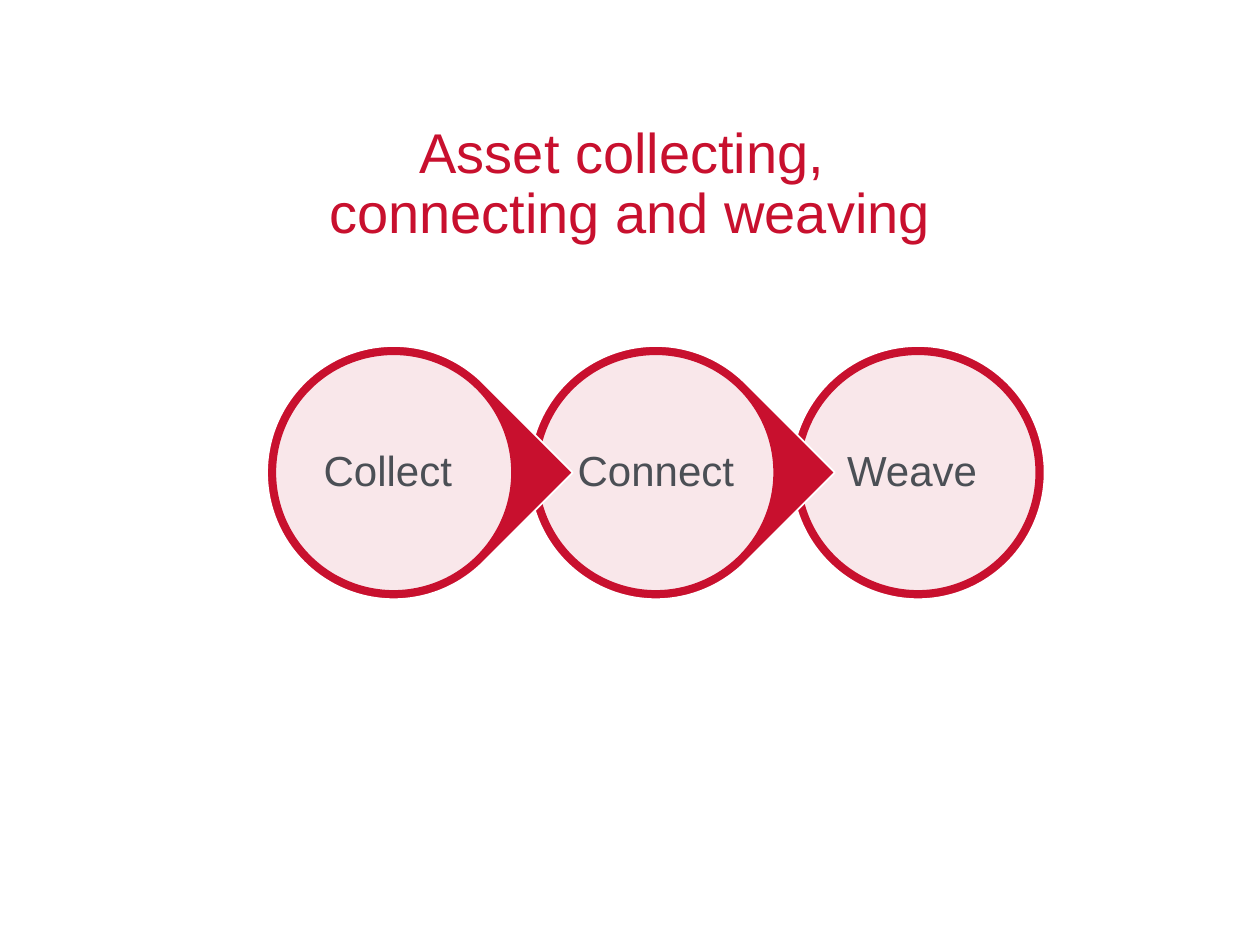
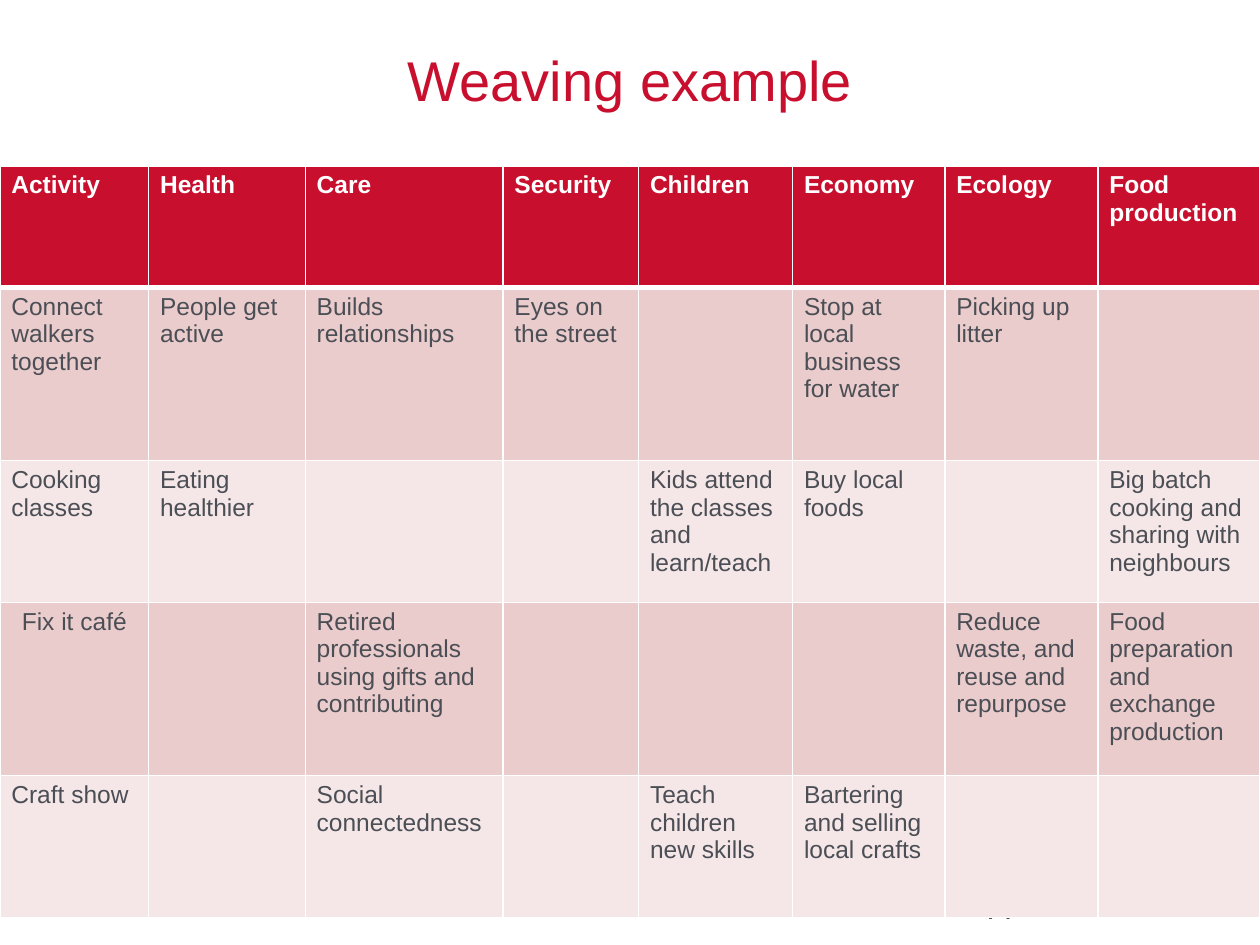
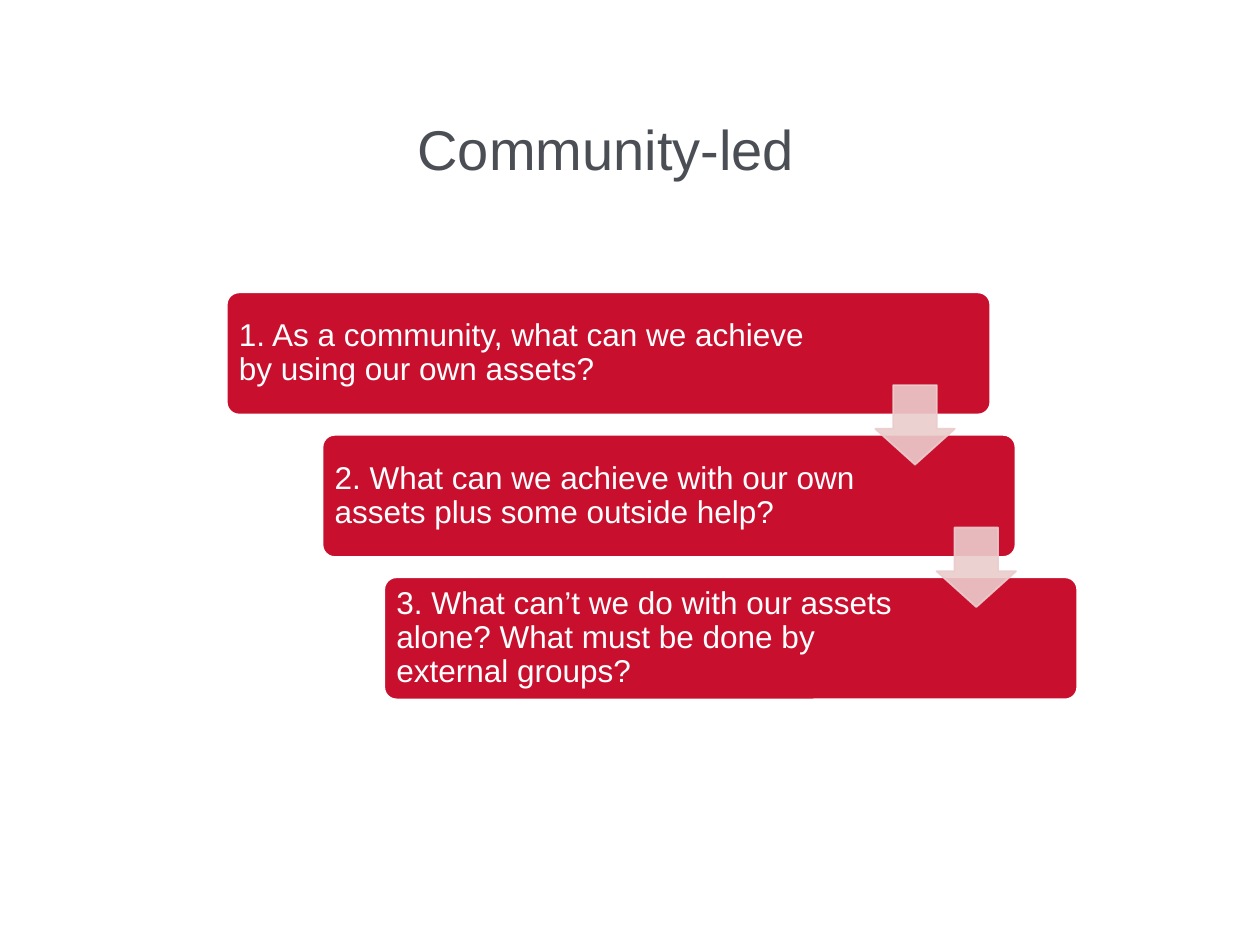
from pptx import Presentation
from pptx.dml.color import RGBColor as Rgb
from pptx.enum.shapes import MSO_SHAPE as Kind
from pptx.enum.text import MSO_ANCHOR as Anchor, MSO_AUTO_SIZE as Fit, PP_ALIGN as Align
from pptx.oxml import parse_xml
from pptx.oxml.ns import nsdecls, qn
from pptx.util import Pt
from lxml.etree import SubElement as Sub

HUES = {"red": "C8102E", "ink": "4B4F55", "white": "FFFFFF",
        "rose": "EBCCCD", "blush": "F5E7E8"}
FACE = "Arial"
WIDE, HIGH = 720, 540
TITLE_W, TITLE_H = 528.5, 54

COLS = [85, 89.5, 113, 77.5, 88, 87, 87.5, 92.5]
ROWS = [69.5, 99, 81, 99, 81]
GRID = [
    ["Activity", "Health", "Care", "Security", "Children", "Economy",
     "Ecology", "Food production"],
    ["Connect walkers together", "People get active", "Builds relationships",
     "Eyes on the street", "", "Stop at local business for water",
     "Picking up litter", ""],
    ["Cooking classes", "Eating healthier", "", "",
     "Kids attend the classes and learn/teach", "Buy local foods", "",
     "Big batch cooking and sharing with neighbours"],
    ["Fix it café", "", "Retired professionals using gifts and contributing",
     "", "", "", "Reduce waste, and reuse and repurpose",
     "Food preparation and exchange production"],
    ["Craft show", "", "Social connectedness", "",
     "Teach children new skills", "Bartering and selling local crafts", "", ""],
]

# left, width, label width, text
STEPS = [
    (0, 436.3, 353.5,
     "1. As a community, what can we achieve by using our own assets?"),
    (54.7, 396, 311.8,
     "2. What can we achieve with our own assets plus some outside help?"),
    (90, 396, 311.8,
     "3. What can’t we do with our assets alone? "
     "What must be done by external groups?"),
]


def hue(name):
    return Rgb.from_string(HUES[name])


def assign(item, values):
    for name, value in values.items():
        setattr(item, name, value)


def write(frame, text, size, color, bold=False, **para):
    frame.text = text
    for part in frame.paragraphs:
        assign(part, para)
        for run in part.runs:
            assign(run.font, {"name": FACE, "size": Pt(size), "bold": bold})
            run.font.color.rgb = hue(color)


def shape(slide, kind, box, fill, line, alpha=None, edge=None, turn=0, adj=()):
    """Add a preset shape; alpha and edge are the opacity of fill and line."""
    item = slide.shapes.add_shape(kind, *map(Pt, box))
    item.shadow.inherit = False
    item.rotation = turn
    item.fill.solid()
    item.fill.fore_color.rgb = hue(fill)
    item.line.color.rgb = hue(line)
    item.line.width = Pt(1)
    for place, value in enumerate(adj):
        item.adjustments[place] = value
    props = item.element.spPr
    for node, share in ((props, alpha), (props.find(qn("a:ln")), edge)):
        if share:
            tint = node.find(qn("a:solidFill")).find(qn("a:srgbClr"))
            Sub(tint, qn("a:alpha"), val=str(share * 1000))


def label(slide, box, text, size, color, pad, align):
    frame = slide.shapes.add_textbox(*map(Pt, box)).text_frame
    sides = {"margin_" + s: Pt(pad) for s in ("left", "top", "right", "bottom")}
    assign(frame, {"word_wrap": True, "vertical_anchor": Anchor.MIDDLE, **sides})
    write(frame, text, size, color, alignment=align, line_spacing=0.9)


def head(slide, left, top, text, color="red"):
    title = slide.shapes.title
    assign(title, {"left": Pt(left), "top": Pt(top),
                   "width": Pt(TITLE_W), "height": Pt(TITLE_H)})
    assign(title.text_frame, {"vertical_anchor": Anchor.TOP,
                              "auto_size": Fit.NONE, "word_wrap": True})
    write(title.text_frame, text, 32, color,
          alignment=Align.CENTER, line_spacing=0.9)


def chain(slide, left, top, size, pitch, words):
    """Draw linked drops from right to left, so each tip overlaps the next."""
    def inset(x, gap):
        return x + gap, top + gap, size - 2 * gap, size - 2 * gap

    last = len(words) - 1
    for place in range(last, -1, -1):
        x = left + place * pitch
        if place == last:
            shape(slide, Kind.OVAL, inset(x, 0), "red", "white")
        else:
            shape(slide, Kind.TEAR, inset(x, 0), "red", "white",
                  turn=45, adj=[1])
        shape(slide, Kind.OVAL, inset(x, 4.7), "white", "red", alpha=90)
        label(slide, inset(x, 24.2), words[place], 24, "ink", 2.4, Align.CENTER)


def border(cell, base):
    props = cell._tc.get_or_add_tcPr()
    for side, width in (("L", 1), ("R", 1), ("T", 1), ("B", base)):
        props.append(parse_xml(
            f'<a:ln{side} {nsdecls("a")} w="{Pt(width)}"><a:solidFill>'
            f'<a:srgbClr val="{HUES["white"]}"/></a:solidFill></a:ln{side}>'))


def matrix(slide, left, top):
    box = left, top, sum(COLS), sum(ROWS)
    table = slide.shapes.add_table(len(ROWS), len(COLS), *map(Pt, box)).table
    for col, width in zip(table.columns, COLS):
        col.width = Pt(width)
    for r, (row, high) in enumerate(zip(table.rows, ROWS)):
        row.height = Pt(high)
        fill = "red" if r == 0 else ("blush", "rose")[r % 2]
        for cell, text in zip(row.cells, GRID[r]):
            assign(cell, {"margin_left": Pt(6.5), "margin_right": Pt(6.5),
                          "margin_top": Pt(3.25), "margin_bottom": Pt(3.25)})
            border(cell, 3 if r == 0 else 1)
            cell.fill.solid()
            cell.fill.fore_color.rgb = hue(fill)
            align = Align.CENTER if text == "Fix it café" else Align.LEFT
            write(cell.text_frame, text, 14, "ink" if r else "white",
                  bold=r == 0, alignment=align)


def stairs(slide, left, top, high, pitch):
    pad = 2.15
    for place, (x, wide, span, text) in enumerate(STEPS):
        y = top + place * pitch
        shape(slide, Kind.ROUNDED_RECTANGLE, (left + x, y, wide, high),
              "red", "white", adj=[0.1])
        label(slide, (left + x + pad, y + pad, span, high - 2 * pad),
              text, 18, "white", 4.8, Align.LEFT)
    for place in range(len(STEPS) - 1):
        box = left + 370.6 + place * 35, top + 53 + place * pitch, 45.4, 45.4
        shape(slide, Kind.DOWN_ARROW, box, "rose", "rose",
              alpha=90, edge=90, adj=[0.55, 0.45])


def main():
    deck = Presentation()
    assign(deck, {"slide_width": Pt(WIDE), "slide_height": Pt(HIGH)})
    first, second, third = (deck.slides.add_slide(deck.slide_layouts[5])
                            for _ in range(3))

    chain(first, 152.6, 197.7, 144.7, 149.8, ["Collect ", "Connect ", "Weave "])
    head(first, 95.75, 67.7, "Asset collecting, \vconnecting and weaving")

    note = second.shapes.add_textbox(*map(Pt, (558, 504, 162, 29))).text_frame
    note.word_wrap = True
    write(note, "A", 18, "ink")
    matrix(second, 0, 94.8)
    head(second, 95.75, 26.6, "Weaving example")

    stairs(third, 129.6, 167.1, 69.8, 81.4)
    head(third, 82, 66.2, "Community-led", "ink")
    deck.save("out.pptx")


if __name__ == "__main__":
    main()
